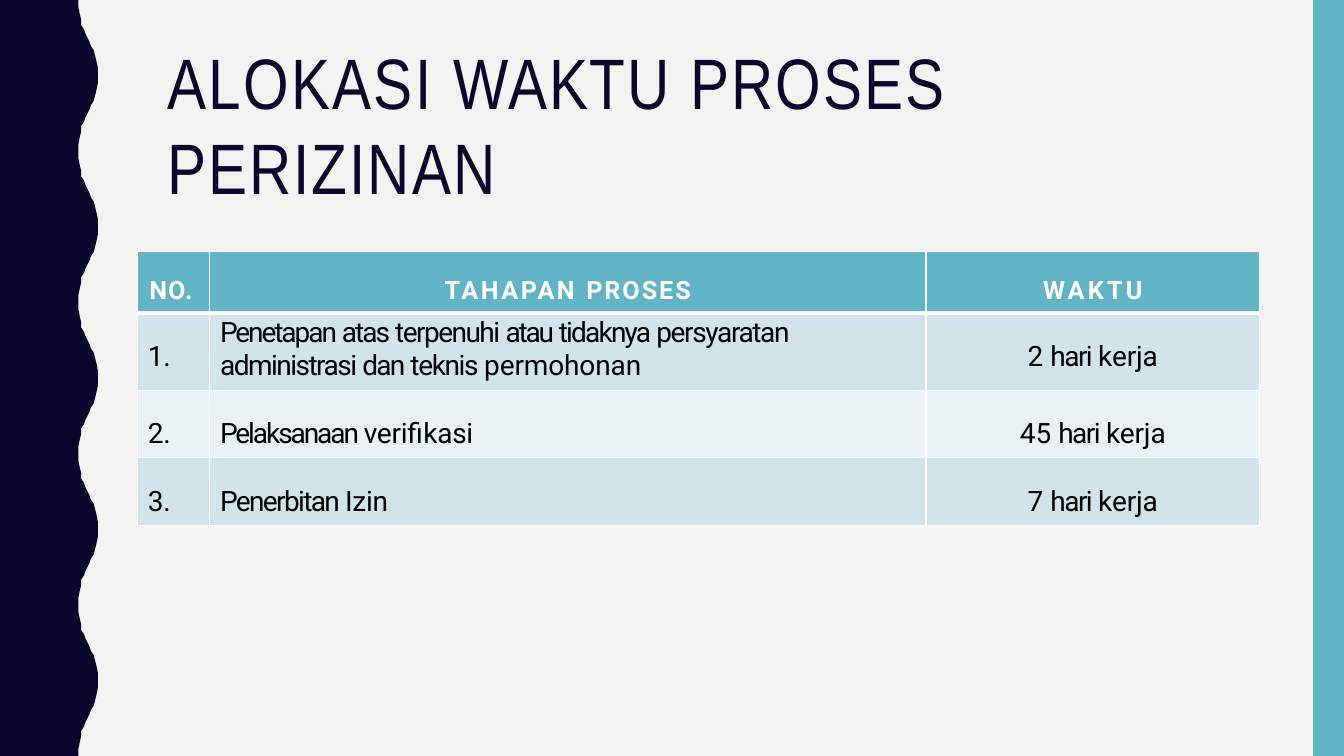
from lxml import etree
from pptx import Presentation
from pptx.dml.color import RGBColor
from pptx.enum import text as tx
from pptx.oxml import ns
from pptx.util import Pt

NAVY = RGBColor(0x0A, 0x07, 0x2D)
TEAL = RGBColor(0x61, 0xB4, 0xC5)
PAPER = RGBColor(0xF3, 0xF3, 0xF1)
DARK = RGBColor(0xD2, 0xE4, 0xEA)
LIGHT = RGBColor(0xEA, 0xF1, 0xF5)
WHITE = RGBColor(0xFF, 0xFF, 0xFF)
BLACK = RGBColor(0, 0, 0)

WIDTH, HEIGHT = 960, 540
HALF = 54  # half the height of one wave
CURVE = [(56.2, 0), (56.5, 5), (57, 10), (57.6, 14.4), (58.5, 18),
         (59.8, 21), (61.2, 24), (64, 30), (65.4, 33), (66.9, 36),
         (68, 39.6), (69, 44), (69.6, 49), (69.8, 54)]

TITLE = [("ALOKASI ", 1.7), ("WAKTU ", 1.4), ("PROSES PERIZINAN", 1.5)]
COLS = [51.6, 511.6, 238.4]
ROWS = [43.9, 55.4, 48.2, 48.2]
HEAD = [
    [("NO.", 0.8)],
    [("TAHAPAN ", 1.8), ("PROSES", 1.4)],
    [("WAKTU", 2.3)],
]
STEPS = [
    ([("Penetapan ", -1.5), ("atas ", -1.4), ("terpenuhi ", -1.1),
      ("atau ", -1.6), ("tidaknya ", -1.3), ("persyaratan ", -1),
      ("administrasi ", -1.1), ("dan ", -1.3), ("teknis ", -1),
      ("permohonan", -0.1)], "2 "),
    ([("Pelaksanaan ", -1.5), ("verifikasi", -0.2)], "45 "),
    ([("Penerbitan ", -1.2), ("Izin", -0.2)], "7 "),
]


def write(frame, runs, size=20, font="Roboto", color=BLACK, bold=False,
          align=tx.PP_ALIGN.LEFT):
    """Fill the frame with (text, letter spacing) runs."""
    para = frame.paragraphs[0]
    para.alignment = align
    for words, gap in runs:
        run = para.add_run()
        run.text = words
        run.font.size = Pt(size)
        run.font.name = font
        run.font.bold = bold
        run.font.color.rgb = color
        run.font._element.set("spc", str(round(gap * 100)))


def inset(box, left=0, top=0, right=0):
    box.margin_left, box.margin_top = Pt(left), Pt(top)
    box.margin_right, box.margin_bottom = Pt(right), Pt(0)


def outline(slide, points, color):
    maker = slide.shapes.build_freeform(*points[0], scale=Pt(1))
    maker.add_line_segments(points[1:], close=True)
    shape = maker.convert_to_shape()
    shape.shadow.inherit = False
    shape.fill.solid()
    shape.fill.fore_color.rgb = color
    shape.line.fill.background()


def wave(slide):
    edge = []
    for top in range(0, HEIGHT, 2 * HALF):
        edge += [(x, top + y) for x, y in CURVE]
        edge += [(x, top + 2 * HALF - y) for x, y in reversed(CURVE[:-1])]
    outline(slide, [(0, 0)] + edge + [(0, HEIGHT)], NAVY)


def border(cell, **widths):
    """Draw white cell edges; keys are L, R, T and B in that order."""
    props = cell._tc.get_or_add_tcPr()
    for side, width in widths.items():
        line = etree.SubElement(props, ns.qn("a:ln" + side), w=str(Pt(width)))
        fill = etree.SubElement(line, ns.qn("a:solidFill"))
        etree.SubElement(fill, ns.qn("a:srgbClr"), val=str(WHITE))


def head(slide):
    title = slide.shapes.title
    title.left, title.top = Pt(105), Pt(26)
    title.width, title.height = Pt(789), Pt(63.4)
    frame = title.text_frame
    frame.word_wrap = True
    frame.auto_size = tx.MSO_AUTO_SIZE.SHAPE_TO_FIT_TEXT
    frame.vertical_anchor = tx.MSO_ANCHOR.TOP
    inset(frame, left=14.4, top=1)
    write(frame, TITLE, size=51, font="Arial Narrow", color=NAVY)
    frame.paragraphs[0].space_before = Pt(1)


def grid(slide):
    table = slide.shapes.add_table(len(ROWS), len(COLS), Pt(98.2), Pt(179.5),
                                   Pt(sum(COLS)), Pt(sum(ROWS))).table
    for col, width in zip(table.columns, COLS):
        col.width = Pt(width)
    for row, height in zip(table.rows, ROWS):
        row.height = Pt(height)
    body = [[[(f"{n}.", -0.2)], step, [(days, 0), ("hari ", -1.1), ("kerja", -0.1)]]
            for n, (step, days) in enumerate(STEPS, 1)]
    for r, line in enumerate([HEAD] + body):
        top = r == 0
        for c, runs in enumerate(line):
            cell = table.cell(r, c)
            mid = c == 2 or (top and c == 1)
            drop = 18.1 if top else 2.8 if (r, c) == (1, 1) else 19.6
            inset(cell, left=0 if mid else 8.5 if top else 7.4, top=drop,
                  right=0 if mid else 4)
            cell.vertical_anchor = tx.MSO_ANCHOR.TOP
            border(cell, L=1, R=1, T=3 if r == 1 else 1, B=3 if top else 1)
            cell.fill.solid()
            cell.fill.fore_color.rgb = TEAL if top else DARK if r % 2 else LIGHT
            write(cell.text_frame, runs, size=18 if top else 20, bold=top,
                  color=WHITE if top else BLACK,
                  align=tx.PP_ALIGN.CENTER if mid else tx.PP_ALIGN.LEFT)


def main():
    deck = Presentation()
    deck.slide_width, deck.slide_height = Pt(WIDTH), Pt(HEIGHT)
    slide = deck.slides.add_slide(deck.slide_layouts[5])
    slide.background.fill.solid()
    slide.background.fill.fore_color.rgb = PAPER
    wave(slide)
    outline(slide, [(937.5, 0), (WIDTH, 0), (WIDTH, HEIGHT), (937.5, HEIGHT)], TEAL)
    head(slide)
    grid(slide)
    deck.save("out.pptx")


if __name__ == "__main__":
    main()
